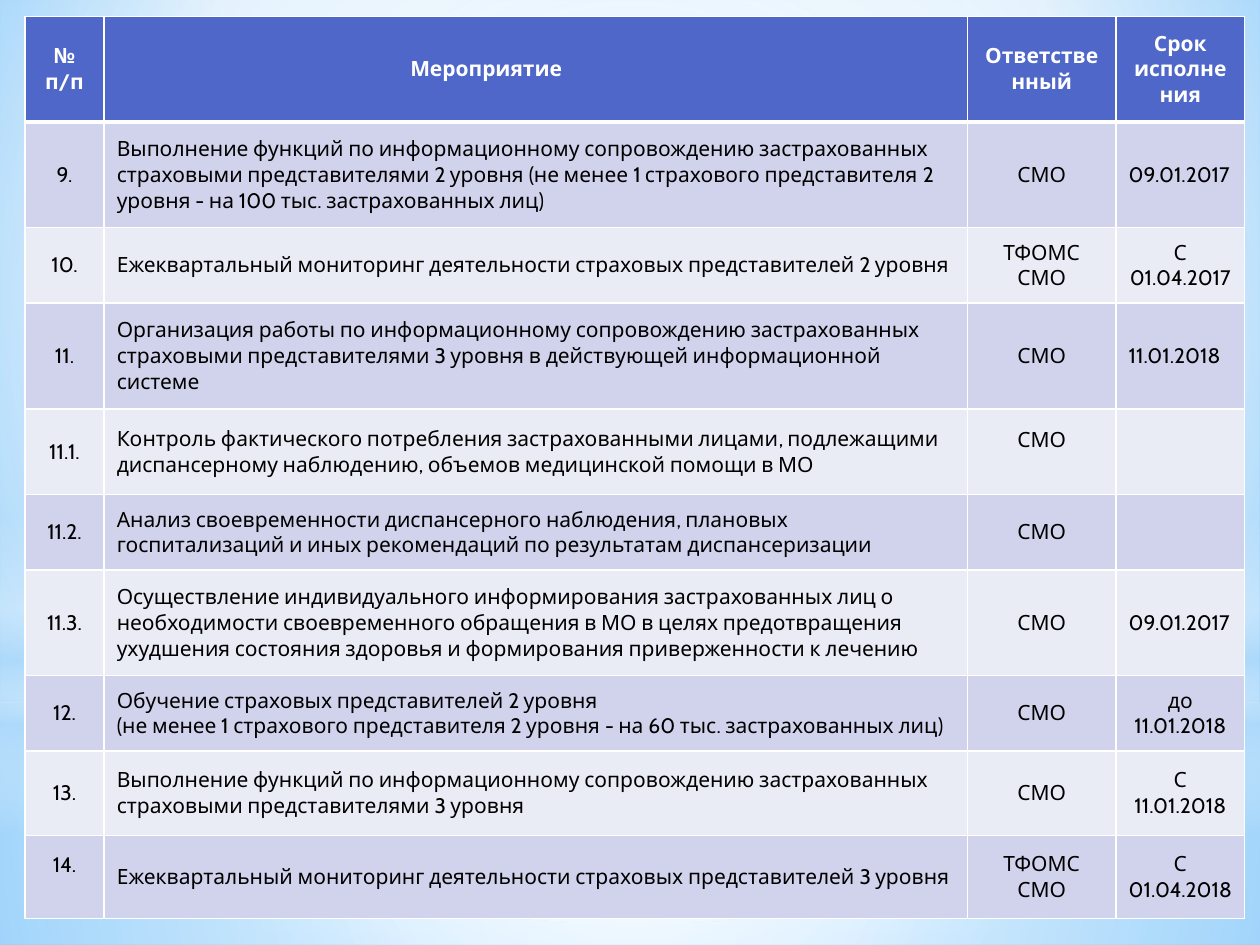
from dataclasses import dataclass
from typing import Optional

from lxml import etree
from pptx import Presentation
from pptx.dml.color import RGBColor
from pptx.enum import shapes, text
from pptx.oxml import ns
from pptx.util import Cm, Pt

LEFT, MID = text.PP_ALIGN.LEFT, text.PP_ALIGN.CENTER
RECT, OVAL = shapes.MSO_SHAPE.RECTANGLE, shapes.MSO_SHAPE.OVAL


@dataclass(frozen=True)
class Theme:
    font: str = "Cabin"
    size: int = 12
    head: str = "4E67C8"
    odd: str = "D0D3EB"
    even: str = "E9EBF5"
    ink: str = "000000"
    white: str = "FFFFFF"
    haze: str = "B4DCFA"
    core: str = "9ED5FF"
    rim: str = "5BB9FF"


@dataclass(frozen=True)
class Grad:
    """Stops are (position, colour, opacity) in percent; hub is l, t, r, b."""
    stops: tuple
    hub: Optional[tuple] = (50, 50, 50, 50)


@dataclass(frozen=True)
class Layer:
    kind: shapes.MSO_SHAPE
    top: float
    height: float
    grad: Grad


@dataclass(frozen=True)
class Row:
    height: float
    num: str
    task: str
    who: str
    due: str
    raised: Optional[int] = None  # column whose text sits above the middle


T = Theme()
WIDTH, HEIGHT = 25.4, 19.05
COLS = (1.6, 17.4, 3.0, 2.59)
RAISE, SHIFT = 0.61, 2.25

BACK = Grad(((0, T.core, 100), (60, T.white, 100), (100, T.rim, 100)),
            (20, 10, 20, 60))
LAYERS = (
    Layer(RECT, 14.17, 4.88, Grad(
        ((0, T.white, 91), (37, T.white, 76), (100, T.haze, 79)))),
    Layer(RECT, 0, 14.17, Grad(
        ((0, T.white, 89), (48, T.white, 62), (100, T.haze, 79)))),
    Layer(RECT, 10.46, 6.35, Grad(
        ((0, T.white, 0), (29, T.white, 30), (45, T.haze, 40),
         (55, T.white, 26), (65, T.haze, 60), (100, T.white, 0)), None)),
    Layer(OVAL, 4.45, 14.17, Grad(((0, T.white, 100), (56, T.white, 0)))),
)

ROWS = (
    Row(2.13, "№ п/п", "Мероприятие", "Ответственный", "Срок исполнения"),
    Row(2.13, "9.", "Выполнение функций по информационному сопровождению "
        "застрахованных страховыми представителями 2 уровня (не менее 1 "
        "страхового представителя 2 уровня - на 100 тыс. застрахованных лиц)",
        "СМО", "09.01.2017"),
    Row(1.52, "10.", "Ежеквартальный мониторинг деятельности страховых "
        "представителей 2 уровня", "ТФОМС\nСМО", "С 01.04.2017"),
    Row(2.13, "11.", "Организация работы по информационному сопровождению "
        "застрахованных страховыми представителями 3 уровня в действующей "
        "информационной системе", "СМО", "11.01.2018"),
    Row(1.73, "11.1.", "Контроль фактического потребления застрахованными "
        "лицами, подлежащими диспансерному наблюдению, объемов медицинской "
        "помощи в МО", "СМО", "", raised=2),
    Row(1.52, "11.2.", "Анализ своевременности диспансерного наблюдения, "
        "плановых госпитализаций и иных рекомендаций по результатам "
        "диспансеризации", "СМО", ""),
    Row(2.13, "11.3.", "Осуществление индивидуального информирования "
        "застрахованных лиц о необходимости своевременного обращения в МО в "
        "целях предотвращения ухудшения состояния здоровья и формирования "
        "приверженности к лечению", "СМО", "09.01.2017"),
    Row(1.52, "12.", "Обучение страховых представителей 2 уровня\n(не менее 1 "
        "страхового представителя 2 уровня - на 60 тыс. застрахованных лиц)",
        "СМО", "до 11.01.2018"),
    Row(1.7, "13.", "Выполнение функций по информационному сопровождению "
        "застрахованных страховыми представителями 3 уровня",
        "СМО", "С 11.01.2018"),
    Row(1.68, "14.", "Ежеквартальный мониторинг деятельности страховых "
        "представителей 3 уровня", "ТФОМС\nСМО", "С 01.04.2018", raised=0),
)


def add(node, tag: str, **attrs):
    """Append a DrawingML child with the given attributes."""
    return etree.SubElement(node, ns.qn(f"a:{tag}"),
                            {k: str(v) for k, v in attrs.items()})


def shade(node, grad: Grad) -> None:
    """Swap the solid fill under node for a gradient."""
    old = node.find(ns.qn("a:solidFill"))
    fill = etree.Element(ns.qn("a:gradFill"), rotWithShape="1")
    stops = add(fill, "gsLst")
    for pos, color, alpha in grad.stops:
        stop = add(stops, "gs", pos=pos * 1000)
        add(add(stop, "srgbClr", val=color), "alpha", val=alpha * 1000)
    if grad.hub:
        sides = {k: v * 1000 for k, v in zip("ltrb", grad.hub)}
        add(add(fill, "path", path="circle"), "fillToRect", **sides)
    else:
        add(fill, "lin", ang=90 * 60000, scaled=0)
    node.replace(old, fill)


def draw_back(slide) -> None:
    slide.background.fill.solid()
    shade(slide.element.find(".//" + ns.qn("p:bgPr")), BACK)
    for layer in LAYERS:
        shape = slide.shapes.add_shape(
            layer.kind, 0, Cm(layer.top), Cm(WIDTH), Cm(layer.height))
        shape.shadow.inherit = False
        shape.line.fill.background()
        shape.fill.solid()
        shade(shape.element.spPr, layer.grad)


def edge(cell, base: float) -> None:
    """Draw white borders; base is the bottom width in points."""
    props = cell._tc.get_or_add_tcPr()
    for i, side in enumerate("LRTB"):
        line = add(props, f"ln{side}", w=Pt(base if side == "B" else 1))
        add(add(line, "solidFill"), "srgbClr", val=T.white)
        props.insert(i, line)


def write(cell, words: str, align, color: str, bold: bool) -> None:
    cell.vertical_anchor = text.MSO_ANCHOR.MIDDLE
    cell.text = words
    for para in cell.text_frame.paragraphs:
        para.alignment = align
        font = para.font
        font.name, font.size, font.bold = T.font, Pt(T.size), bold
        font.color.rgb = RGBColor.from_string(color)


def draw_table(slide) -> None:
    table = slide.shapes.add_table(
        len(ROWS), len(COLS), Cm(0.5), Cm(0.33), Cm(sum(COLS)),
        Cm(sum(row.height for row in ROWS))).table
    table.first_row = table.horz_banding = False
    for col, width in zip(table.columns, COLS):
        col.width = Cm(width)
    for r, row in enumerate(ROWS):
        table.rows[r].height = Cm(row.height)
        head = r == 0
        fill = T.head if head else T.odd if r % 2 else T.even
        for c, words in enumerate((row.num, row.task, row.who, row.due)):
            cell = table.cell(r, c)
            cell.fill.solid()
            cell.fill.fore_color.rgb = RGBColor.from_string(fill)
            edge(cell, 3 if head or r == 1 and False else 1)
            plain = c == 1 or c == 3 and " " not in words
            write(cell, words, LEFT if plain and not head else MID,
                  T.white if head else T.ink, head)
            if c == row.raised:
                cell.margin_bottom = Cm(RAISE)
    table.cell(0, 1).margin_right = Cm(SHIFT)


def main() -> None:
    deck = Presentation()
    deck.slide_width, deck.slide_height = Cm(WIDTH), Cm(HEIGHT)
    slide = deck.slides.add_slide(deck.slide_layouts[6])
    draw_back(slide)
    draw_table(slide)
    deck.save("out.pptx")


if __name__ == "__main__":
    main()
